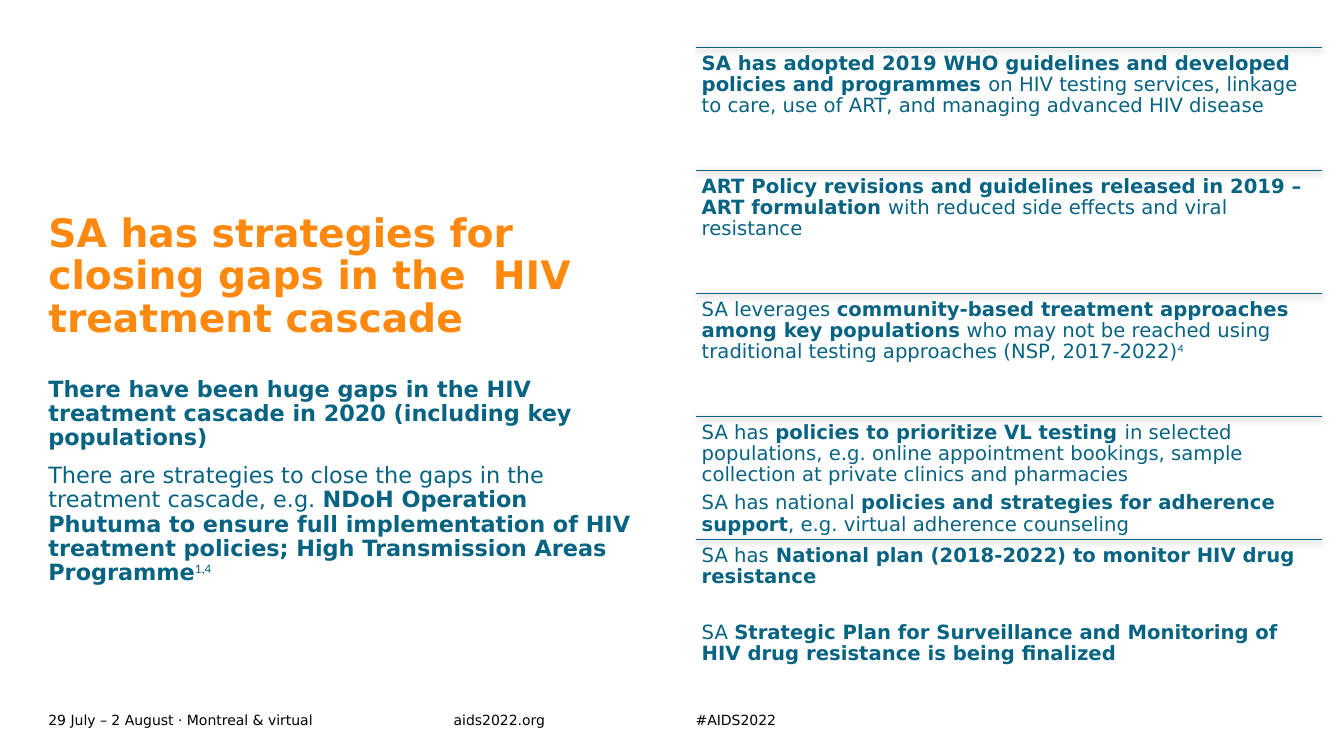
"""Build the slide on South Africa's strategies for the HIV treatment cascade."""
from lxml import etree
from pptx import Presentation
from pptx.dml.color import RGBColor
from pptx.enum.shapes import MSO_CONNECTOR
from pptx.enum.text import MSO_ANCHOR
from pptx.oxml.ns import qn
from pptx.util import Inches, Pt

STRAIGHT = MSO_CONNECTOR.STRAIGHT
TOP, MIDDLE, BOTTOM = MSO_ANCHOR.TOP, MSO_ANCHOR.MIDDLE, MSO_ANCHOR.BOTTOM

TEAL = RGBColor(0x07, 0x63, 0x82)
ORANGE = RGBColor(0xFF, 0x89, 0x0E)
BLACK = RGBColor(0, 0, 0)
FONT, NOTE_FONT = "DejaVu Sans", "Calibri"

LEFT, LEFT_W = 0.48, 5.95
RIGHT, RIGHT_W = 6.9, 6.21
ROW_TOP, ROW_H = 0.47, 1.22

PLAIN, BOLD, NOTE = "plain", "bold", "note"

TITLE = [[("SA has strategies for closing gaps in the  HIV treatment cascade", BOLD)]]
SUMMARY = [
    [("There have been huge gaps in the HIV treatment cascade in 2020 "
      "(including key populations)", BOLD)],
    [("There are strategies to close the gaps in the treatment cascade, e.g. ", PLAIN),
     ("NDoH Operation Phutuma to ensure full implementation of HIV treatment policies; "
      "High Transmission Areas Programme", BOLD),
     ("1,4", NOTE)],
]
STRATEGIES = [
    [[("SA has adopted 2019 WHO guidelines and developed policies and programmes ", BOLD),
      ("on HIV testing services, linkage to care, use of ART, "
       "and managing advanced HIV disease", PLAIN)]],
    [[("ART Policy revisions and guidelines released in 2019 – ART formulation ", BOLD),
      ("with reduced side effects and viral resistance", PLAIN)]],
    [[("SA leverages ", PLAIN),
      ("community-based treatment approaches among key populations", BOLD),
      (" who may not be reached using traditional testing approaches "
       "(NSP, 2017-2022)", PLAIN),
      ("4", NOTE)]],
    [[("SA has ", PLAIN), ("policies to prioritize VL testing ", BOLD),
      ("in selected populations, e.g. online appointment bookings, "
       "sample collection at private clinics and pharmacies", PLAIN)],
     [("SA has national ", PLAIN),
      ("policies and strategies for adherence support", BOLD),
      (", e.g. virtual adherence counseling", PLAIN)]],
    [[("SA has", PLAIN),
      (" National plan (2018-2022) to monitor HIV drug resistance", BOLD)],
     [("SA ", PLAIN),
      ("Strategic Plan for Surveillance and Monitoring of HIV drug resistance "
       "is being finalized", BOLD)]],
]
FOOTERS = [
    (LEFT, 4.02, "29 July – 2 August · Montreal & virtual"),
    (4.5, 1.93, "aids2022.org"),
    (RIGHT, 1.93, "#AIDS2022"),
]


def add_text(s, x, y, w, h, paragraphs, size=14, color=TEAL, anchor=TOP,
             inset=0, spacing=0.9, before=0, after=0):
    """Add a text box whose paragraphs are lists of (text, style) runs."""
    tf = s.shapes.add_textbox(Inches(x), Inches(y), Inches(w), Inches(h)).text_frame
    tf.word_wrap = True
    tf.vertical_anchor = anchor
    tf.margin_left = tf.margin_right = tf.margin_top = tf.margin_bottom = Inches(inset)
    for i, runs in enumerate(paragraphs):
        p = tf.add_paragraph() if i else tf.paragraphs[0]
        p.line_spacing = spacing
        p.space_before = Pt(before if i else 0)
        p.space_after = Pt(after)
        for text, style in runs:
            r = p.add_run()
            r.text = text
            r.font.name = NOTE_FONT if style == NOTE else FONT
            r.font.size = Pt(size)
            r.font.bold = style == BOLD
            r.font.color.rgb = color
            if style == NOTE:
                r.font._element.set("baseline", "30000")


def add_rule(s, y):
    """Add a thin horizontal rule with a soft shadow below it."""
    line = s.shapes.add_connector(STRAIGHT, Inches(RIGHT), Inches(y),
                                  Inches(RIGHT + RIGHT_W), Inches(y))
    line.line.color.rgb = TEAL
    line.line.width = Pt(0.5)
    effects = etree.SubElement(line._element.spPr, qn("a:effectLst"))
    shadow = etree.SubElement(effects, qn("a:outerShdw"), blurRad=str(Pt(4.5)),
                              dist=str(Pt(1.5)), dir="5400000", algn="ctr",
                              rotWithShape="0")
    black = etree.SubElement(shadow, qn("a:srgbClr"), val=str(BLACK))
    etree.SubElement(black, qn("a:alpha"), val="63000")


def add_strategies(s):
    """Add the ruled rows of strategies on the right."""
    for i, paragraphs in enumerate(STRATEGIES):
        y = ROW_TOP + i * ROW_H
        is_last = i == len(STRATEGIES) - 1
        add_rule(s, y)
        add_text(s, RIGHT, y, RIGHT_W if i else 6.11, ROW_H, paragraphs, inset=0.06,
                 before=20 if is_last else 0, after=5)


def main():
    """Build and save the slide."""
    prs = Presentation()
    prs.slide_width, prs.slide_height = Inches(13.33), Inches(7.5)
    s = prs.slides.add_slide(prs.slide_layouts[6])
    for x, w, text in FOOTERS:
        add_text(s, x, 7.02, w, 0.24, [[(text, PLAIN)]], size=10, color=BLACK,
                 anchor=MIDDLE, spacing=1.0)
    add_text(s, LEFT, 3.75, LEFT_W, 2.53, SUMMARY, size=16, before=10)
    add_text(s, LEFT, 1.82, LEFT_W, 1.56, TITLE, size=28, color=ORANGE, anchor=BOTTOM)
    add_strategies(s)
    prs.save("out.pptx")


if __name__ == "__main__":
    main()
